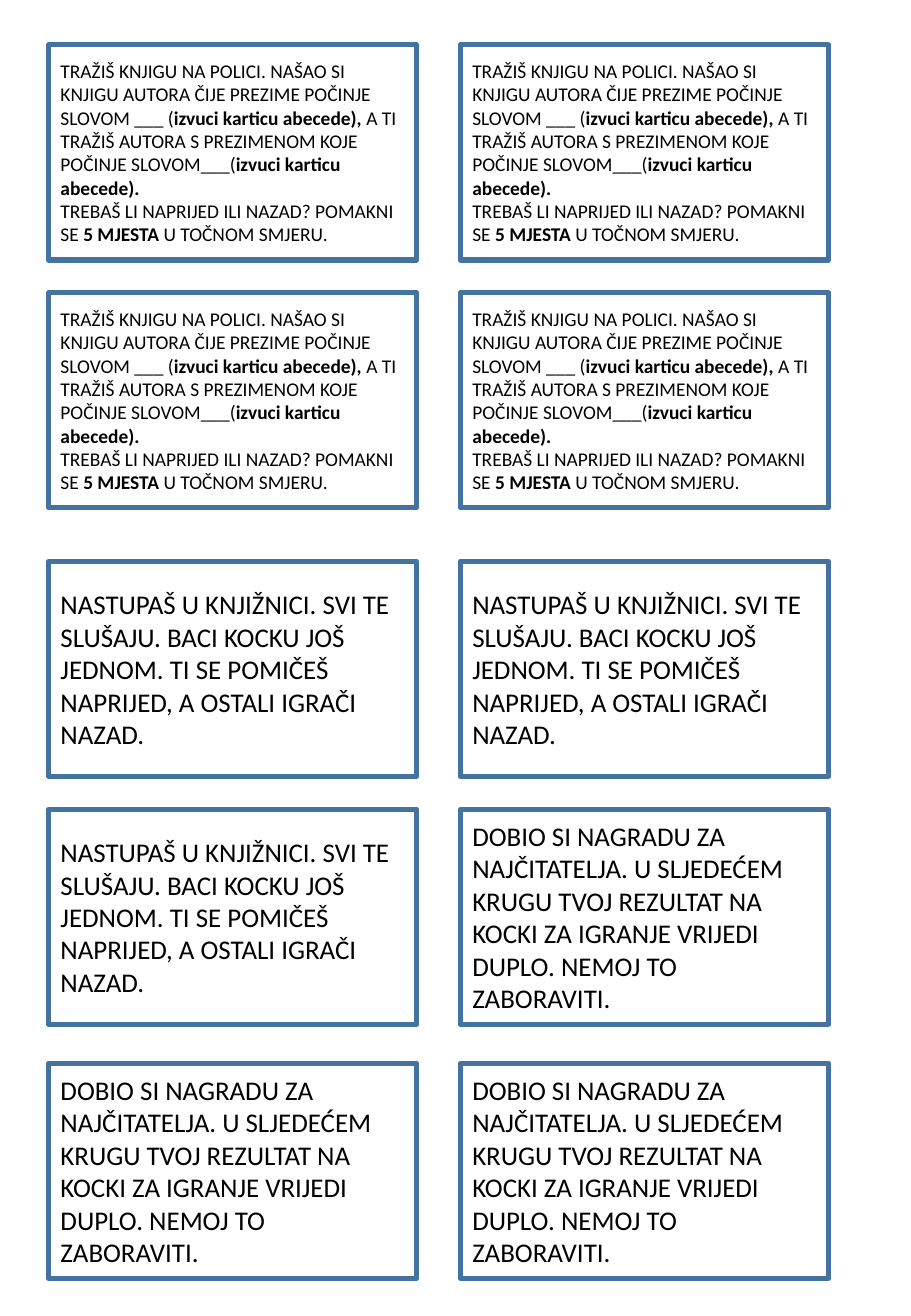
"""Build a sheet of library board game cards in two columns."""
from pptx import Presentation
from pptx import util as u
from pptx.dml.color import RGBColor
from pptx.enum import shapes, text

PX = u.Inches(1) // 100
COLUMNS = (40, 379)
ROWS = (37, 241, 462, 666, 875)
CARD_WIDTH, CARD_HEIGHT = 303, 177

SHELF = (11.5, [
    [("TRAŽIŠ KNJIGU NA POLICI. NAŠAO SI KNJIGU AUTORA ČIJE PREZIME "
      "POČINJE SLOVOM ___ (", False),
     ("izvuci karticu abecede), ", True),
     ("A TI TRAŽIŠ AUTORA S PREZIMENOM KOJE POČINJE SLOVOM___(", False),
     ("izvuci karticu abecede).", True)],
    [("TREBAŠ LI NAPRIJED ILI NAZAD? POMAKNI SE ", False),
     ("5 MJESTA ", True),
     ("U TOČNOM SMJERU.", False)],
])
SHOW = (16, [[
    ("NASTUPAŠ U KNJIŽNICI. SVI TE SLUŠAJU. BACI KOCKU JOŠ JEDNOM. "
     "TI SE POMIČEŠ NAPRIJED, A OSTALI IGRAČI NAZAD.", False)]])
AWARD = (16, [[
    ("DOBIO SI NAGRADU ZA NAJČITATELJA. U SLJEDEĆEM KRUGU TVOJ REZULTAT "
     "NA KOCKI ZA IGRANJE VRIJEDI DUPLO. NEMOJ TO ZABORAVITI.", False)]])
CARD_GRID = ((SHELF, SHELF), (SHELF, SHELF), (SHOW, SHOW),
             (SHOW, AWARD), (AWARD, AWARD))


def color(value):
    """Turn a hex string into a colour."""
    return RGBColor.from_string(value)


def add_span(para, words, size, bold):
    """Add one run of black text to a paragraph."""
    span = para.add_run()
    span.text = words
    span.font.name = "Calibri"
    span.font.size = u.Pt(size)
    span.font.bold = bold
    span.font.color.rgb = color("000000")


def add_card(page, left, top, size, paragraphs):
    """Add a framed card with left-aligned text."""
    box = page.shapes.add_shape(
        shapes.MSO_SHAPE.RECTANGLE, left * PX, top * PX,
        CARD_WIDTH * PX, CARD_HEIGHT * PX)
    box.shadow.inherit = False
    box.fill.solid()
    box.fill.fore_color.rgb = color("FFFFFF")
    box.line.color.rgb = color("43739E")
    box.line.width = u.Pt(3)
    frame = box.text_frame
    frame.word_wrap = True
    frame.vertical_anchor = text.MSO_ANCHOR.MIDDLE
    for index, spans in enumerate(paragraphs):
        para = frame.add_paragraph() if index else frame.paragraphs[0]
        para.alignment = text.PP_ALIGN.LEFT
        for words, bold in spans:
            add_span(para, words, size, bold)


def main():
    """Lay out the cards and save the deck."""
    deck = Presentation()
    deck.slide_width, deck.slide_height = 750 * PX, 1083 * PX
    page = deck.slides.add_slide(deck.slide_layouts[6])
    for top, cards in zip(ROWS, CARD_GRID):
        for left, (size, paragraphs) in zip(COLUMNS, cards):
            add_card(page, left, top, size, paragraphs)
    deck.save("out.pptx")


if __name__ == "__main__":
    main()
